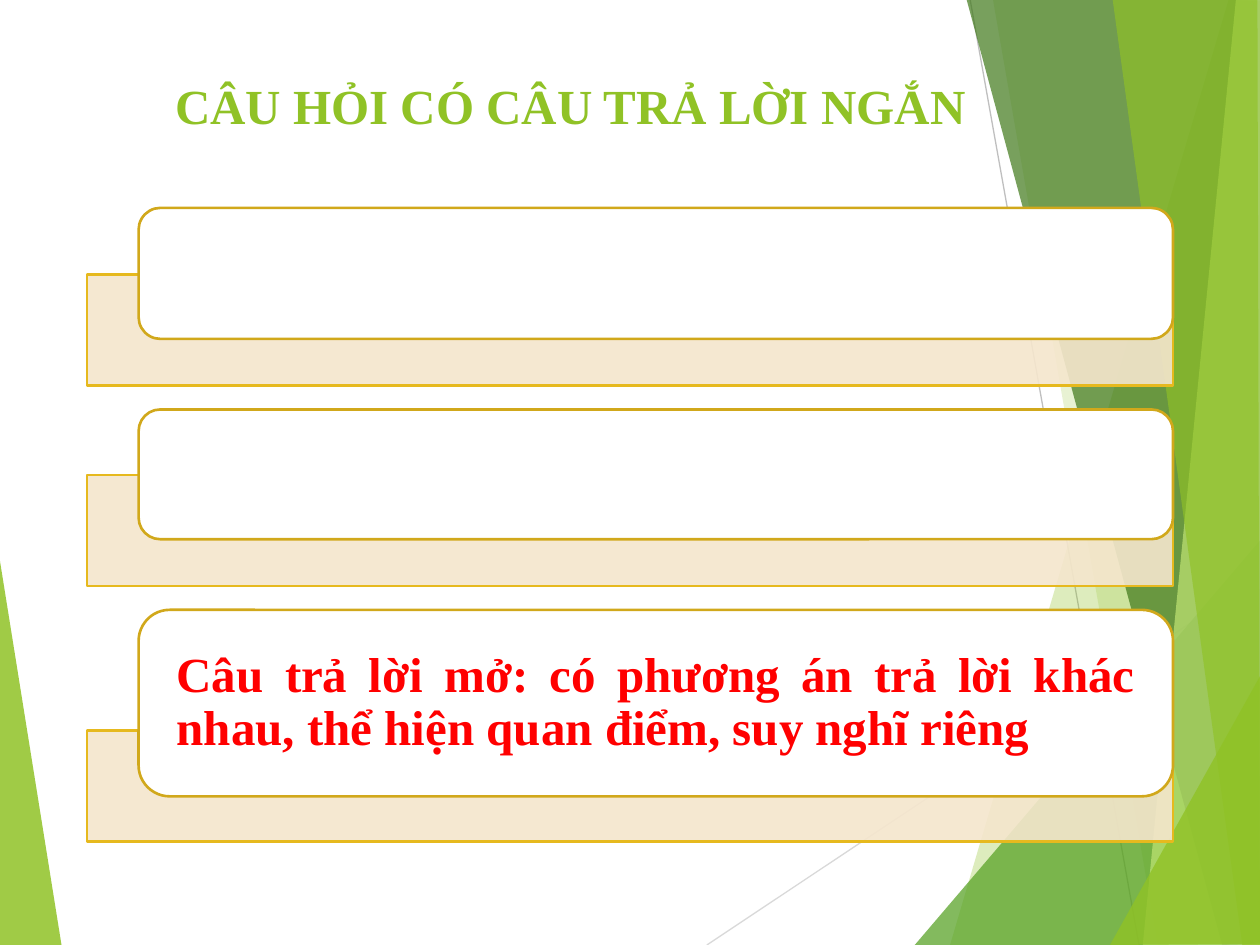
from dataclasses import dataclass

from lxml.etree import SubElement
from pptx import Presentation
from pptx.dml.color import RGBColor
from pptx.enum.shapes import MSO_CONNECTOR as Connector, MSO_SHAPE as Preset
from pptx.enum.text import MSO_ANCHOR as Anchor, PP_ALIGN as Align
from pptx.oxml.ns import qn
from pptx.util import Inches, Pt

FONT = "Times New Roman"
LIME = RGBColor(0x90, 0xC2, 0x26)
GREEN = RGBColor(0x54, 0xA0, 0x21)
FOREST = RGBColor(0x3F, 0x78, 0x19)
PALE_LIME = RGBColor(0xC0, 0xE4, 0x74)
LIGHT_GRAY = RGBColor(0xD9, 0xD9, 0xD9)
GRAY = RGBColor(0xBF, 0xBF, 0xBF)
CREAM = RGBColor(0xF5, 0xE6, 0xCD)
GOLD = RGBColor(0xE6, 0xB9, 0x1E)
DARK_GOLD = RGBColor(0xD1, 0xA8, 0x1B)
WHITE = RGBColor(0xFF, 0xFF, 0xFF)
RED = RGBColor(0xFF, 0x00, 0x00)

Point = tuple[float, float]


@dataclass
class Facet:
    points: list[Point]
    color: RGBColor
    opacity: int


@dataclass
class Ray:
    start: Point
    end: Point
    color: RGBColor


@dataclass
class Answer:
    card_top: float
    card_height: float
    bar_top: float
    text: str = ""


DECOR = [
    Facet([(-0.01, 4.39), (0.49, 7.51), (-0.01, 7.5)], LIME, 85),
    Ray((5.61, 7.5), (10.01, 4.57), LIGHT_GRAY),
    Ray((7.7, 0), (9.04, 7.5), GRAY),
    Facet([(9.75, 0), (7.54, 7.5), (10.02, 7.51), (10.01, 0.01)], LIME, 30),
    Facet([(7.88, -0.01), (9.19, 7.5), (10.01, 7.5), (10.01, -0.01)], LIME, 20),
    Facet([(7.26, 7.5), (10, 4.29), (10.01, 7.5)], GREEN, 72),
    Facet([(7.67, -0.01), (9.7, 7.5), (10.01, 7.49), (10.01, -0.01)], FOREST, 70),
    Facet([(9.81, -0.01), (9.07, 7.5), (10.01, 7.5), (10, -0.01)], PALE_LIME, 70),
    Facet([(8.83, -0.01), (9.86, 7.5), (10, 7.5), (9.98, -0.01)], LIME, 65),
    Facet([(8.81, 7.5), (10.01, 5.35), (10.01, 7.49)], LIME, 80),
]

ANSWERS = [
    Answer(1.65, 1.04, 2.18),
    Answer(3.25, 1.03, 3.77),
    Answer(4.84, 1.48, 5.8,
           "Câu trả lời mở: có phương án trả lời khác nhau, "
           "thể hiện quan điểm, suy nghĩ riêng"),
]


def paint(shape, color: RGBColor, opacity: int = 100, outline: RGBColor | None = None) -> None:
    shape.shadow.inherit = False
    shape.fill.solid()
    shape.fill.fore_color.rgb = color
    if opacity < 100:
        tint = shape.element.spPr.find(qn("a:solidFill"))[0]
        SubElement(tint, qn("a:alpha")).set("val", str(opacity * 1000))
    if outline is None:
        shape.line.fill.background()
    else:
        shape.line.color.rgb = outline
        shape.line.width = Pt(1.5)


def draw_facet(page, facet: Facet) -> None:
    first, *rest = [(Inches(x), Inches(y)) for x, y in facet.points]
    builder = page.shapes.build_freeform(*first)
    builder.add_line_segments(rest, close=True)
    paint(builder.convert_to_shape(), facet.color, facet.opacity)


def draw_ray(page, ray: Ray) -> None:
    ends = [Inches(value) for value in ray.start + ray.end]
    line = page.shapes.add_connector(Connector.STRAIGHT, *ends)
    line.line.color.rgb = ray.color
    line.line.width = Pt(0.75)
    SubElement(line.element.spPr, qn("a:effectLst"))


def write(shape, text: str, color: RGBColor, align: Align):
    frame = shape.text_frame
    frame.text = text
    frame.word_wrap = True
    frame.vertical_anchor = Anchor.MIDDLE
    para = frame.paragraphs[0]
    para.alignment = align
    font = para.runs[0].font
    font.name, font.size, font.bold = FONT, Pt(28), True
    font.color.rgb = color
    return para


def draw_answer(page, answer: Answer) -> None:
    bar = page.shapes.add_shape(
        Preset.RECTANGLE, Inches(0.69), Inches(answer.bar_top), Inches(8.62), Inches(0.88))
    paint(bar, CREAM, 90, GOLD)
    card = page.shapes.add_shape(
        Preset.ROUNDED_RECTANGLE, Inches(1.1), Inches(answer.card_top),
        Inches(8.21), Inches(answer.card_height))
    paint(card, WHITE, outline=DARK_GOLD)
    if answer.text:
        frame = card.text_frame
        frame.margin_left = frame.margin_right = Inches(0.23)
        frame.margin_top = frame.margin_bottom = 0
        para = write(card, answer.text, RED, Align.JUSTIFY)
        para.line_spacing = 0.9
        para.space_after = Pt(9.8)


def draw_title(page, text: str) -> None:
    title = page.shapes.title
    title.left, title.top = Inches(1), Inches(0.5)
    title.width, title.height = Inches(7.05), Inches(0.67)
    write(title, text, LIME, Align.CENTER)
    title.element.getparent().append(title.element)


def main() -> None:
    deck = Presentation()
    deck.slide_width, deck.slide_height = Inches(10), Inches(7.5)
    page = deck.slides.add_slide(deck.slide_layouts[5])
    for item in DECOR:
        if isinstance(item, Facet):
            draw_facet(page, item)
        else:
            draw_ray(page, item)
    draw_title(page, "CÂU HỎI CÓ CÂU TRẢ LỜI NGẮN")
    for answer in ANSWERS:
        draw_answer(page, answer)
    deck.save("out.pptx")


if __name__ == "__main__":
    main()
